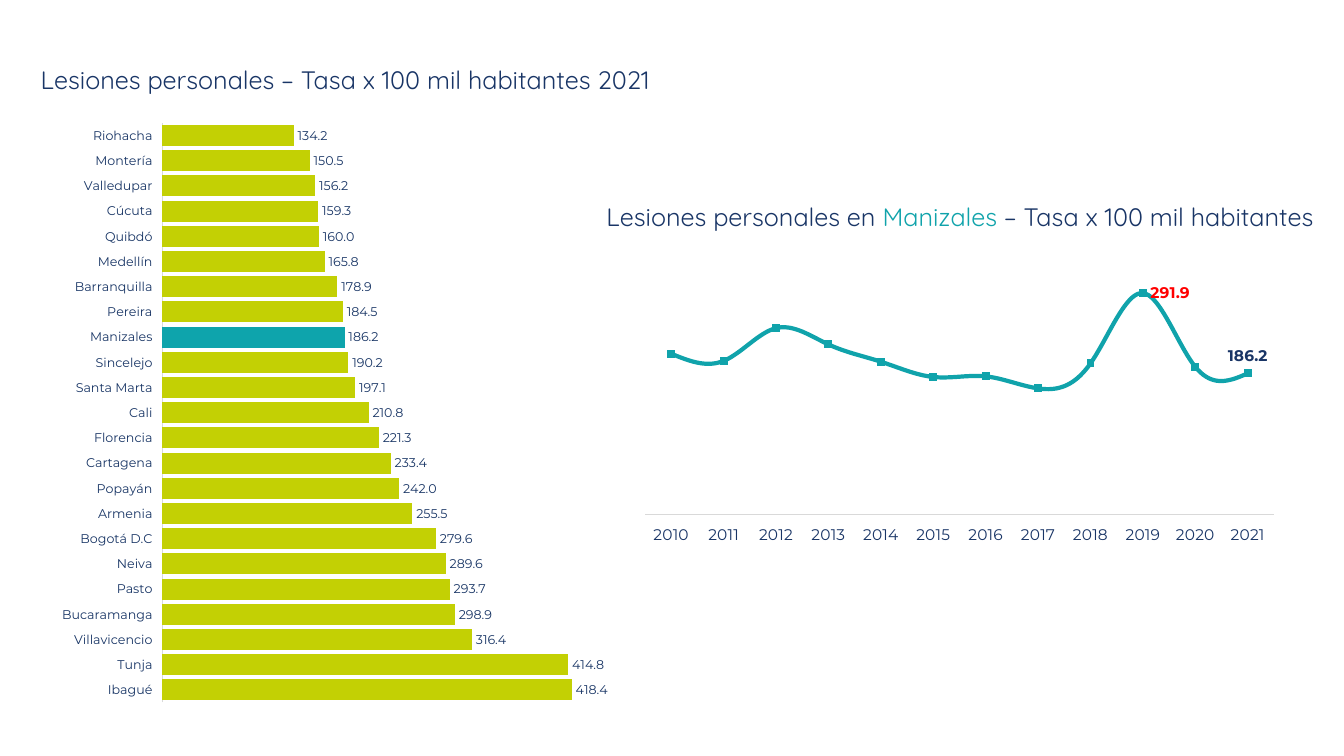
from dataclasses import dataclass

from lxml import etree
from pptx import Presentation
from pptx.chart.chart import Chart
from pptx.chart.data import CategoryChartData
from pptx.dml.color import RGBColor
from pptx.enum.chart import XL_CHART_TYPE, XL_LABEL_POSITION, XL_TICK_LABEL_POSITION, XL_TICK_MARK
from pptx.enum.text import MSO_AUTO_SIZE, PP_ALIGN
from pptx.oxml.ns import qn
from pptx.slide import Slide
from pptx.text.text import Font
from pptx.util import Pt

BAR = XL_CHART_TYPE.BAR_CLUSTERED
LINE = XL_CHART_TYPE.LINE
ABOVE = XL_LABEL_POSITION.ABOVE
RIGHT = XL_LABEL_POSITION.RIGHT
OUTSIDE_END = XL_LABEL_POSITION.OUTSIDE_END
LOW = XL_TICK_LABEL_POSITION.LOW
NO_TICK = XL_TICK_MARK.NONE
CENTER = PP_ALIGN.CENTER
GROW = MSO_AUTO_SIZE.SHAPE_TO_FIT_TEXT

NAVY = RGBColor(0x19, 0x35, 0x66)
CHART_NAVY = RGBColor(0x18, 0x35, 0x65)
TEAL = RGBColor(0x10, 0xA3, 0xAB)
BAR_TEAL = RGBColor(0x0E, 0xA4, 0xAC)
LIME = RGBColor(0xC3, 0xD0, 0x04)
GRAY = RGBColor(0xD9, 0xD9, 0xD9)
RED = RGBColor(0xFF, 0x00, 0x00)

HIGHLIGHT = "Manizales"
CITY_RATES = {
    "Ibagué": 418.4, "Tunja": 414.8, "Villavicencio": 316.4, "Bucaramanga": 298.9,
    "Pasto": 293.7, "Neiva": 289.6, "Bogotá D.C": 279.6, "Armenia": 255.5,
    "Popayán": 242.0, "Cartagena": 233.4, "Florencia": 221.3, "Cali": 210.8,
    "Santa Marta": 197.1, "Sincelejo": 190.2, "Manizales": 186.2, "Pereira": 184.5,
    "Barranquilla": 178.9, "Medellín": 165.8, "Quibdó": 160.0, "Cúcuta": 159.3,
    "Valledupar": 156.2, "Montería": 150.5, "Riohacha": 134.2,
}
YEAR_RATES = {
    "2010": 212.1, "2011": 202.7, "2012": 245.8, "2013": 224.3, "2014": 201.6, "2015": 181.5,
    "2016": 182.3, "2017": 166.5, "2018": 199.4, "2019": 291.9, "2020": 194.8, "2021": 186.2,
}


@dataclass(frozen=True)
class Box:
    left: float
    top: float
    width: float
    height: float

    def lengths(self) -> tuple[Pt, Pt, Pt, Pt]:
        return Pt(self.left), Pt(self.top), Pt(self.width), Pt(self.height)


@dataclass(frozen=True)
class Title:
    box: Box
    runs: tuple[tuple[str, RGBColor], ...]


@dataclass(frozen=True)
class RateChart:
    kind: XL_CHART_TYPE
    box: Box
    plot: Box
    rates: dict[str, float]
    maximum: float
    font_size: float
    color: RGBColor


TITLES = (
    Title(Box(-21.6, 42.5, 536.4, 29), (("Lesiones personales – Tasa x 100 mil habitantes 2021", NAVY),)),
    Title(Box(393.8, 140.4, 583.9, 29), (
        ("Lesiones personales en ", NAVY),
        ("Manizales ", TEAL),
        ("– Tasa x 100 mil habitantes", NAVY),
    )),
)
CITY_CHART = RateChart(BAR, Box(40.3, 79.2, 398.2, 431.3), Box(0.19, 0.02, 0.79, 0.96),
                       CITY_RATES, 450, 9, CHART_NAVY)
YEAR_CHART = RateChart(LINE, Box(451.4, 173.5, 468, 216), Box(0.02, 0.02, 0.96, 0.88),
                       YEAR_RATES, 350, 11, NAVY)
YEAR_LABELS = (("2019", RIGHT, RED), ("2021", ABOVE, NAVY))


def apply_format(target: object, values: dict[str, object]) -> None:
    for name, value in values.items():
        setattr(target, name, value)


def format_font(font: Font, name: str, size: float, color: RGBColor, bold: bool = False) -> None:
    apply_format(font, {"name": name, "size": Pt(size), "bold": bold})
    font.color.rgb = color


def add_title(slide: Slide, title: Title) -> None:
    shape = slide.shapes.add_textbox(*title.box.lengths())
    apply_format(shape.text_frame, {"word_wrap": True, "auto_size": GROW})
    paragraph = shape.text_frame.paragraphs[0]
    paragraph.alignment = CENTER
    for text, color in title.runs:
        run = paragraph.add_run()
        run.text = text
        format_font(run.font, "Quicksand", 18, color)


def place_plot(chart: Chart, plot: Box) -> None:
    plot_area = chart.element.find(".//" + qn("c:plotArea"))
    for layout in plot_area.findall(qn("c:layout")):
        plot_area.remove(layout)
    layout = etree.Element(qn("c:layout"))
    manual = etree.SubElement(layout, qn("c:manualLayout"))
    settings = {"layoutTarget": "inner", "xMode": "edge", "yMode": "edge",
                "x": plot.left, "y": plot.top, "w": plot.width, "h": plot.height}
    for name, value in settings.items():
        etree.SubElement(manual, qn(f"c:{name}")).set("val", str(value))
    plot_area.insert(0, layout)


def add_rate_chart(slide: Slide, rate_chart: RateChart) -> Chart:
    data = CategoryChartData()
    data.categories = rate_chart.rates.keys()
    data.add_series("Series 1", rate_chart.rates.values())
    chart = slide.shapes.add_chart(rate_chart.kind, *rate_chart.box.lengths(), data).chart
    apply_format(chart, {"has_legend": False, "has_title": False})
    format_font(chart.font, "Montserrat", rate_chart.font_size, rate_chart.color)
    apply_format(chart.category_axis, {
        "major_tick_mark": NO_TICK, "minor_tick_mark": NO_TICK,
        "tick_label_position": LOW, "has_major_gridlines": False,
    })
    axis_line = chart.category_axis.format.line
    axis_line.color.rgb = GRAY
    axis_line.width = Pt(0.75)
    apply_format(chart.value_axis, {
        "minimum_scale": 0, "maximum_scale": rate_chart.maximum,
        "has_major_gridlines": False, "visible": False,
    })
    chart.plots[0].vary_by_categories = False
    place_plot(chart, rate_chart.plot)
    return chart


def add_city_chart(slide: Slide) -> None:
    plot = add_rate_chart(slide, CITY_CHART).plots[0]
    apply_format(plot, {"gap_width": 20, "has_data_labels": True})
    apply_format(plot.data_labels, {
        "show_value": True, "number_format": "#,##0.0",
        "number_format_is_linked": False, "position": OUTSIDE_END,
    })
    format_font(plot.data_labels.font, "Montserrat", 9, CHART_NAVY)
    series = plot.series[0]
    highlighted = series.points[list(CITY_RATES).index(HIGHLIGHT)]
    for target, color in ((series, LIME), (highlighted, BAR_TEAL)):
        target.format.fill.solid()
        target.format.fill.fore_color.rgb = color


def add_year_chart(slide: Slide) -> None:
    series = add_rate_chart(slide, YEAR_CHART).plots[0].series[0]
    series.smooth = True
    series.marker.style = None
    series.format.line.color.rgb = TEAL
    series.format.line.width = Pt(3)
    years = list(YEAR_RATES)
    for year, position, color in YEAR_LABELS:
        label = series.points[years.index(year)].data_label
        format_font(label.font, "Montserrat", 11, color, bold=True)
        label.position = position


def main() -> None:
    presentation = Presentation()
    apply_format(presentation, {"slide_width": Pt(960), "slide_height": Pt(540)})
    slide = presentation.slides.add_slide(presentation.slide_layouts[6])
    for title in TITLES:
        add_title(slide, title)
    add_city_chart(slide)
    add_year_chart(slide)
    presentation.save("out.pptx")


if __name__ == "__main__":
    main()
